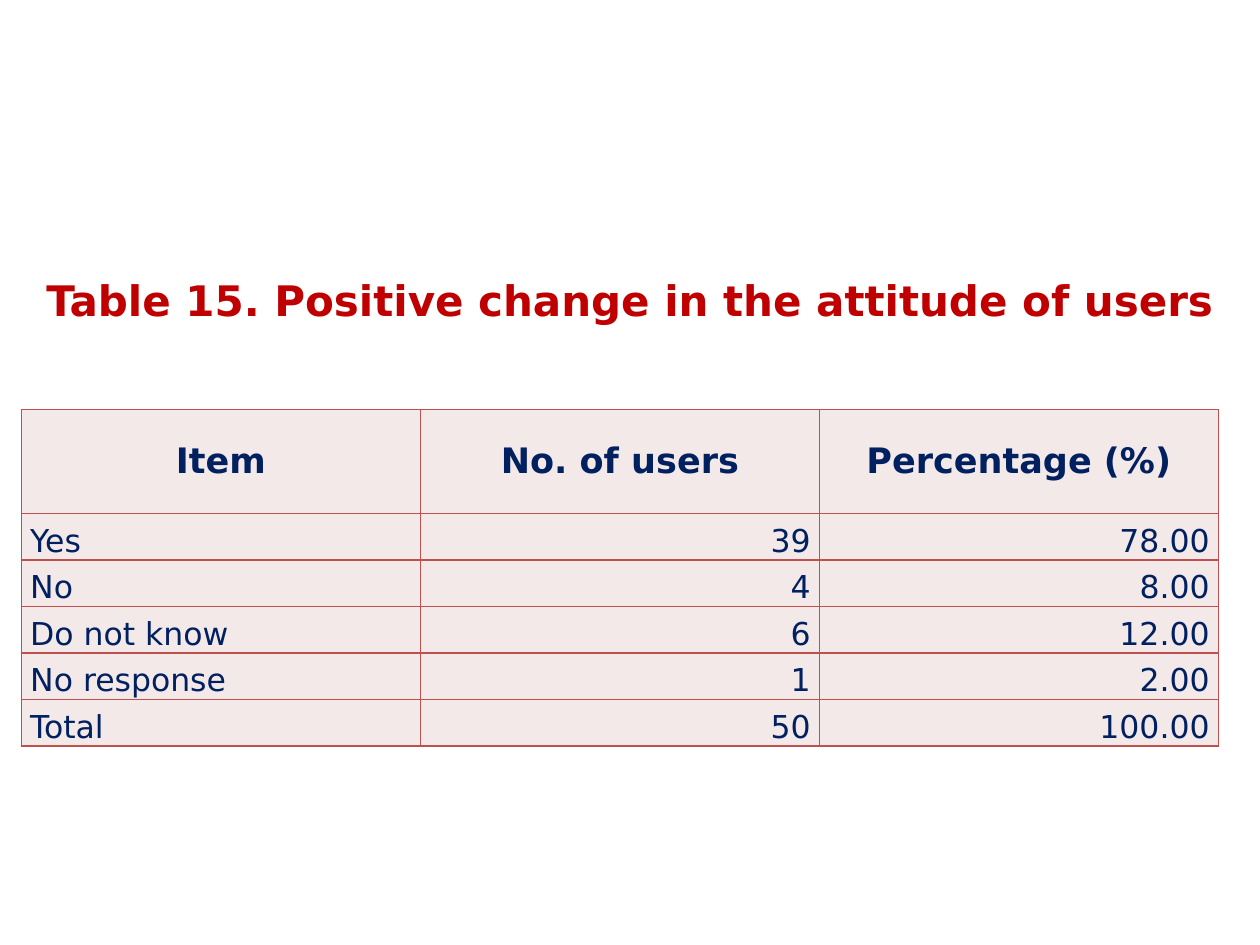
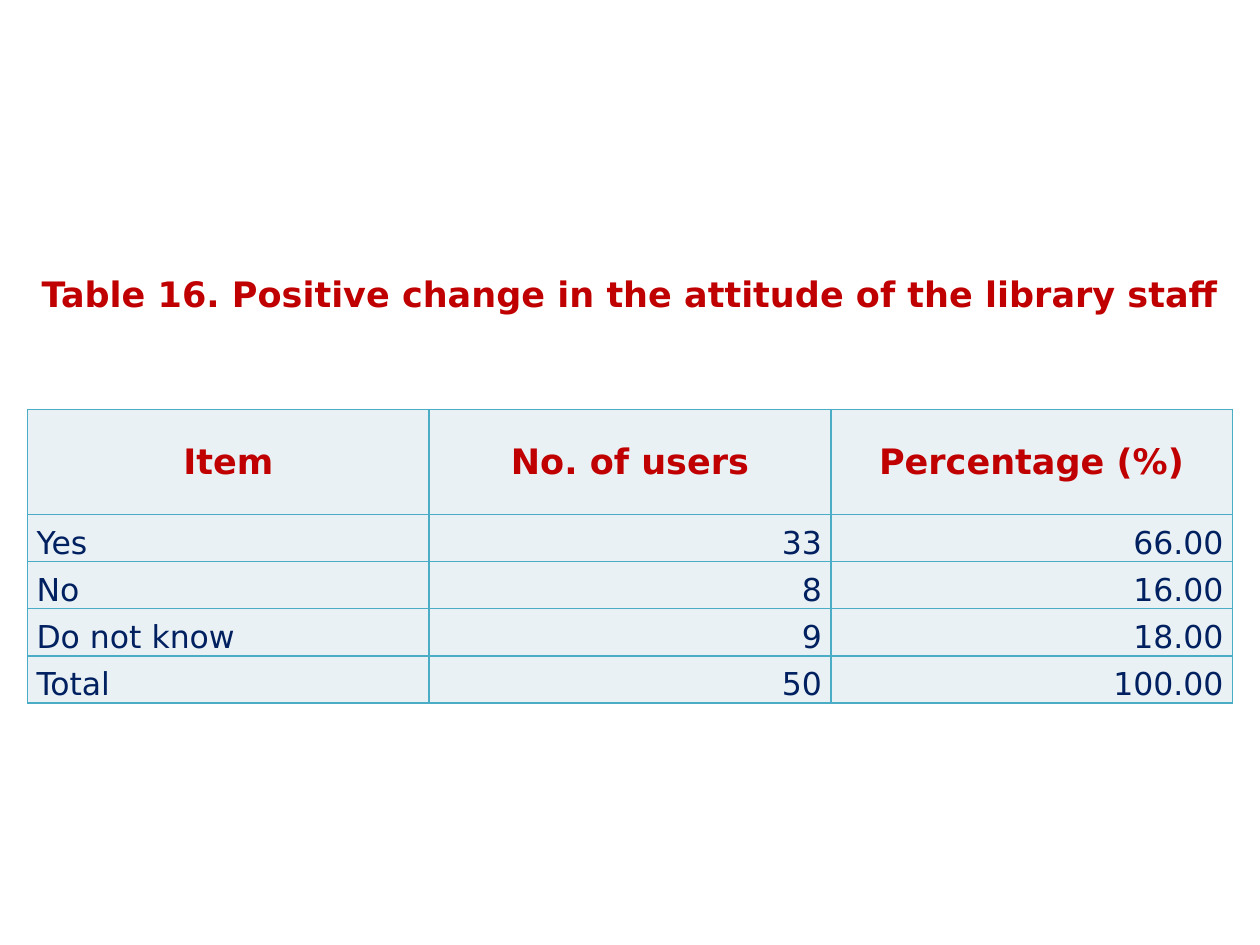
import pptx
import pptx.util
import pptx.dml.color
import pptx.enum.text
import pptx.oxml
import pptx.oxml.ns

RGB = pptx.dml.color.RGBColor
ALIGN = pptx.enum.text.PP_ALIGN
ANCHOR = pptx.enum.text.MSO_ANCHOR

RED = RGB(0xC0, 0x00, 0x00)
NAVY = RGB(0x00, 0x20, 0x60)
ROSE = RGB(0xF4, 0xE9, 0xE9)
BRICK = RGB(0xC0, 0x50, 0x4D)
ICE = RGB(0xE9, 0xF1, 0xF5)
TEAL = RGB(0x4B, 0xAC, 0xC6)

FONT = "DejaVu Sans"
WIDE, HIGH = 100, 75  # grid columns and rows on a slide
UNIT = pptx.util.Inches(0.1)  # side of one grid square
HEADS = ("Item", "No. of users", "Percentage (%)")


def grid(count):
    return round(count * UNIT)


def write(frame, text, size, color, bold, align):
    """Put one run of text into the first paragraph of a frame."""
    line = frame.paragraphs[0]
    line.alignment = align
    run = line.add_run()
    run.text = text
    font = run.font
    font.name, font.size, font.bold = FONT, pptx.util.Pt(size), bold
    font.color.rgb = color


def frame_cell(cell, color):
    """Draw a one-point line on all four sides of a cell."""
    props = cell._tc.get_or_add_tcPr()
    for spot, side in enumerate(("lnL", "lnR", "lnT", "lnB")):
        props.insert(spot, pptx.oxml.parse_xml(
            f'<a:{side} {pptx.oxml.ns.nsdecls("a")} w="{pptx.util.Pt(1)}">'
            f'<a:solidFill><a:srgbClr val="{color}"/></a:solidFill></a:{side}>'))


def add_title(slide, box, text, size):
    title = slide.shapes.title
    title.left, title.top, title.width, title.height = map(grid, box)
    frame = title.text_frame
    frame.word_wrap = False
    frame.auto_size = pptx.enum.text.MSO_AUTO_SIZE.NONE
    frame.vertical_anchor = ANCHOR.MIDDLE
    write(frame, text, size, RED, True, ALIGN.CENTER)


def add_grid(slide, box, head, rows, ink, fill, edge):
    """Fill the box with equal columns, a head row and equal body rows."""
    data = [HEADS, *rows]
    shape = slide.shapes.add_table(len(data), len(HEADS), *map(grid, box))
    table = shape.table
    for col in table.columns:
        col.width = grid(box[2] / len(HEADS))
    for r, values in enumerate(data):
        top = r == 0
        table.rows[r].height = grid(head if top else (box[3] - head) / len(rows))
        for c, value in enumerate(values):
            cell = table.cell(r, c)
            cell.fill.solid()
            cell.fill.fore_color.rgb = fill
            frame_cell(cell, edge)
            cell.margin_left = cell.margin_right = grid(0.7)
            cell.margin_top = cell.margin_bottom = 0
            cell.vertical_anchor = ANCHOR.MIDDLE if top else ANCHOR.BOTTOM
            if top:
                write(cell.text_frame, value, 20, ink, True, ALIGN.CENTER)
            else:
                side = ALIGN.RIGHT if c else ALIGN.LEFT
                write(cell.text_frame, value, 18, NAVY, False, side)


def main():
    deck = pptx.Presentation()
    deck.slide_width, deck.slide_height = grid(WIDE), grid(HIGH)
    plain = deck.slide_layouts.get_by_name("Title Only")

    # Change among users
    slide = deck.slides.add_slide(plain)
    add_title(slide, (2.5, 21.3, 95, 5),
              "Table 15. Positive change in the attitude of users", 24)
    add_grid(slide, (1.7, 32.5, 95, 26.7), 8.25, [
        ("Yes", "39", "78.00"),
        ("No", "4", "8.00"),
        ("Do not know", "6", "12.00"),
        ("No response", "1", "2.00"),
        ("Total", "50", "100.00"),
    ], NAVY, ROSE, BRICK)

    # Change among library staff
    slide = deck.slides.add_slide(plain)
    add_title(slide, (2.2, 21.1, 95.6, 4.4),
              "Table 16. Positive change in the attitude of the library staff", 20)
    add_grid(slide, (2.2, 32.5, 95.6, 23.3), 8.33, [
        ("Yes", "33", "66.00"),
        ("No", "8", "16.00"),
        ("Do not know", "9", "18.00"),
        ("Total", "50", "100.00"),
    ], RED, ICE, TEAL)

    deck.save("out.pptx")


if __name__ == "__main__":
    main()
